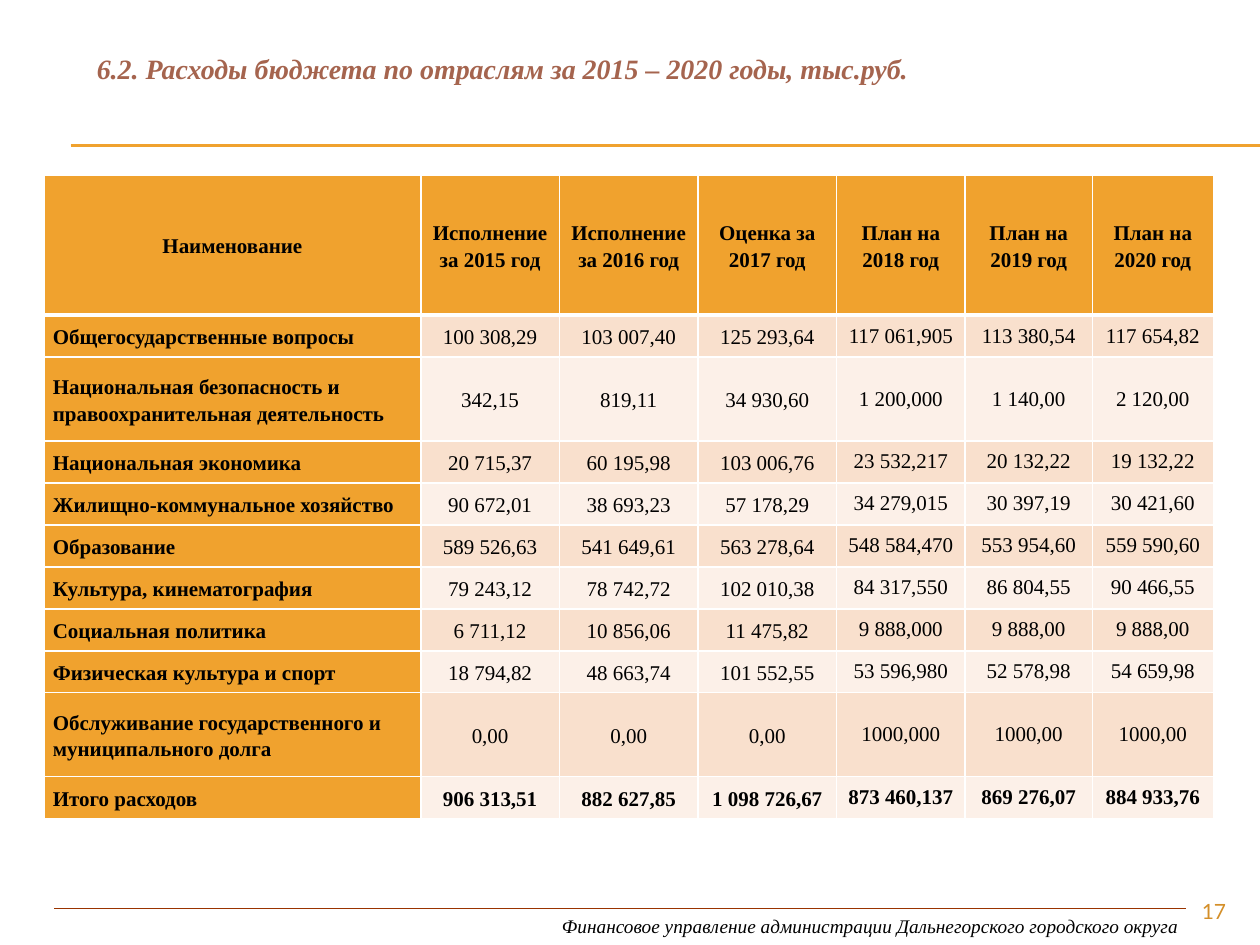
import pptx
import pptx.util
import pptx.dml.color
import pptx.enum.shapes
import pptx.enum.text
import pptx.oxml
import pptx.oxml.ns
from dataclasses import dataclass


@dataclass(frozen=True)
class Theme:
    accent: str = "F0A22E"
    band_dark: str = "F9E0CD"
    band_light: str = "FCF0E8"
    title: str = "A5644E"
    rule: str = "993300"
    number: str = "D48F29"
    ink: str = "000000"
    white: str = "FFFFFF"
    serif: str = "Times New Roman"
    sans: str = "Lato"
    title_size: int = 16
    body_size: int = 12
    footer_size: int = 11


theme = Theme()
rgb = pptx.dml.color.RGBColor.from_string
align = pptx.enum.text.PP_ALIGN

prs = pptx.Presentation()
prs.slide_width = pptx.util.Inches(10)
prs.slide_height = pptx.util.Inches(7.5)
s = prs.slides.add_slide(prs.slide_layouts[6])

# Grid of 100 columns by 75 rows; its cells are square
unit = prs.slide_width // 100


def add_run(p, text, size, color, font=theme.serif, bold=False, italic=False):
    r = p.add_run()
    r.text = text
    r.font.name = font
    r.font.size = pptx.util.Pt(size)
    r.font.color.rgb = rgb(color)
    r.font.bold = bold
    r.font.italic = italic


def add_box(col, row, cols, rows, wrap=True):
    sp = s.shapes.add_textbox(*(int(v * unit) for v in (col, row, cols, rows)))
    sp.text_frame.word_wrap = wrap
    return sp.text_frame


# Rules under the title and above the footer
for left, right, row, color, weight in [
    (5.6, 100, 11.5, theme.accent, 0.75),
    (5.6, 100, 11.6, theme.accent, 0.75),
    (4.3, 94.1, 72.1, theme.rule, 0.79),
]:
    line = s.shapes.add_connector(
        pptx.enum.shapes.MSO_CONNECTOR.STRAIGHT,
        *(int(v * unit) for v in (left, row, right, row)))
    line.line.color.rgb = rgb(color)
    line.line.width = pptx.util.Pt(weight)
    line._element.spPr.append(pptx.oxml.parse_xml(
        f'<a:effectLst {pptx.oxml.ns.nsdecls("a")}/>'))

# Footer
tf = add_box(40.6, 72.1, 54.3, 2.9, wrap=False)
tf.margin_left = 4 * unit
add_run(tf.paragraphs[0],
        "Финансовое управление администрации Дальнегорского городского округа",
        theme.footer_size, theme.ink, italic=True)

# Title
tf = add_box(6.7, 3.6, 87.4, 6.4)
add_run(tf.paragraphs[0],
        "6.2. Расходы бюджета по отраслям за 2015 – 2020 годы, тыс.руб.",
        theme.title_size, theme.title, bold=True, italic=True)

# Table content
rows = [
    ["Наименование", "Исполнение за 2015 год", "Исполнение за 2016 год",
     "Оценка за 2017 год", "План на 2018 год", "План на 2019 год", "План на 2020 год"],
    ["Общегосударственные вопросы", "100 308,29", "103 007,40",
     "125 293,64", "117 061,905", "113 380,54", "117 654,82"],
    ["Национальная безопасность и правоохранительная деятельность", "342,15", "819,11",
     "34 930,60", "1 200,000", "1 140,00", "2 120,00"],
    ["Национальная экономика", "20 715,37", "60 195,98",
     "103 006,76", "23 532,217", "20 132,22", "19 132,22"],
    ["Жилищно-коммунальное хозяйство", "90 672,01", "38 693,23",
     "57 178,29", "34 279,015", "30 397,19", "30 421,60"],
    ["Образование", "589 526,63", "541 649,61",
     "563 278,64", "548 584,470", "553 954,60", "559 590,60"],
    ["Культура, кинематография", "79 243,12", "78 742,72",
     "102 010,38", "84 317,550", "86 804,55", "90 466,55"],
    ["Социальная политика", "6 711,12", "10 856,06",
     "11 475,82", "9 888,000", "9 888,00", "9 888,00"],
    ["Физическая культура и спорт", "18 794,82", "48 663,74",
     "101 552,55", "53 596,980", "52 578,98", "54 659,98"],
    ["Обслуживание государственного и муниципального долга", "0,00", "0,00",
     "0,00", "1000,000", "1000,00", "1000,00"],
    ["Итого расходов", "906 313,51", "882 627,85",
     "1 098 726,67", "873 460,137", "869 276,07", "884 933,76"],
]
last = len(rows) - 1
col_widths = [29.9, 11, 11, 11, 10.2, 10.1, 9.6]
header_height = 11.1
line_height = 10 / 3
two_line_rows = {2, 9}
row_heights = [header_height] + [
    line_height * (2 if i in two_line_rows else 1) for i in range(1, len(rows))]

frame = s.shapes.add_table(
    len(rows), len(col_widths), int(3.5 * unit), int(13.9 * unit),
    int(sum(col_widths) * unit), int(sum(row_heights) * unit))
table = frame.table
for column, width in zip(table.columns, col_widths):
    column.width = int(width * unit)
for row, height in zip(table.rows, row_heights):
    row.height = int(height * unit)

# Table cells: white borders, heavier under the header
for i, values in enumerate(rows):
    for j, value in enumerate(values):
        cell = table.cell(i, j)
        weights = {"L": 1, "R": 1, "T": 3 if i == 1 else 1, "B": 3 if i == 0 else 1}
        for side, weight in weights.items():
            cell._tc.get_or_add_tcPr().append(pptx.oxml.parse_xml(
                f'<a:ln{side} {pptx.oxml.ns.nsdecls("a")} w="{pptx.util.Pt(weight)}">'
                f'<a:solidFill><a:srgbClr val="{theme.white}"/></a:solidFill></a:ln{side}>'))

        is_head = i == 0 or j == 0
        band = theme.band_dark if i % 2 else theme.band_light
        cell.fill.solid()
        cell.fill.fore_color.rgb = rgb(theme.accent if is_head else band)
        cell.vertical_anchor = pptx.enum.text.MSO_ANCHOR.MIDDLE
        cell.margin_left = cell.margin_right = int(0.7 * unit)
        cell.margin_top = cell.margin_bottom = 0

        p = cell.text_frame.paragraphs[0]
        p.alignment = align.LEFT if j == 0 and i > 0 else align.CENTER
        p.line_spacing = 1.15 if i == 0 or j < 4 else 1.0
        add_run(p, value, theme.body_size, theme.ink, bold=is_head or i == last)

# Slide number
tf = add_box(90, 70.8, 8.3, 2.7)
tf.paragraphs[0].alignment = align.RIGHT
add_run(tf.paragraphs[0], "17", theme.body_size, theme.number, font=theme.sans)

prs.save("out.pptx")
